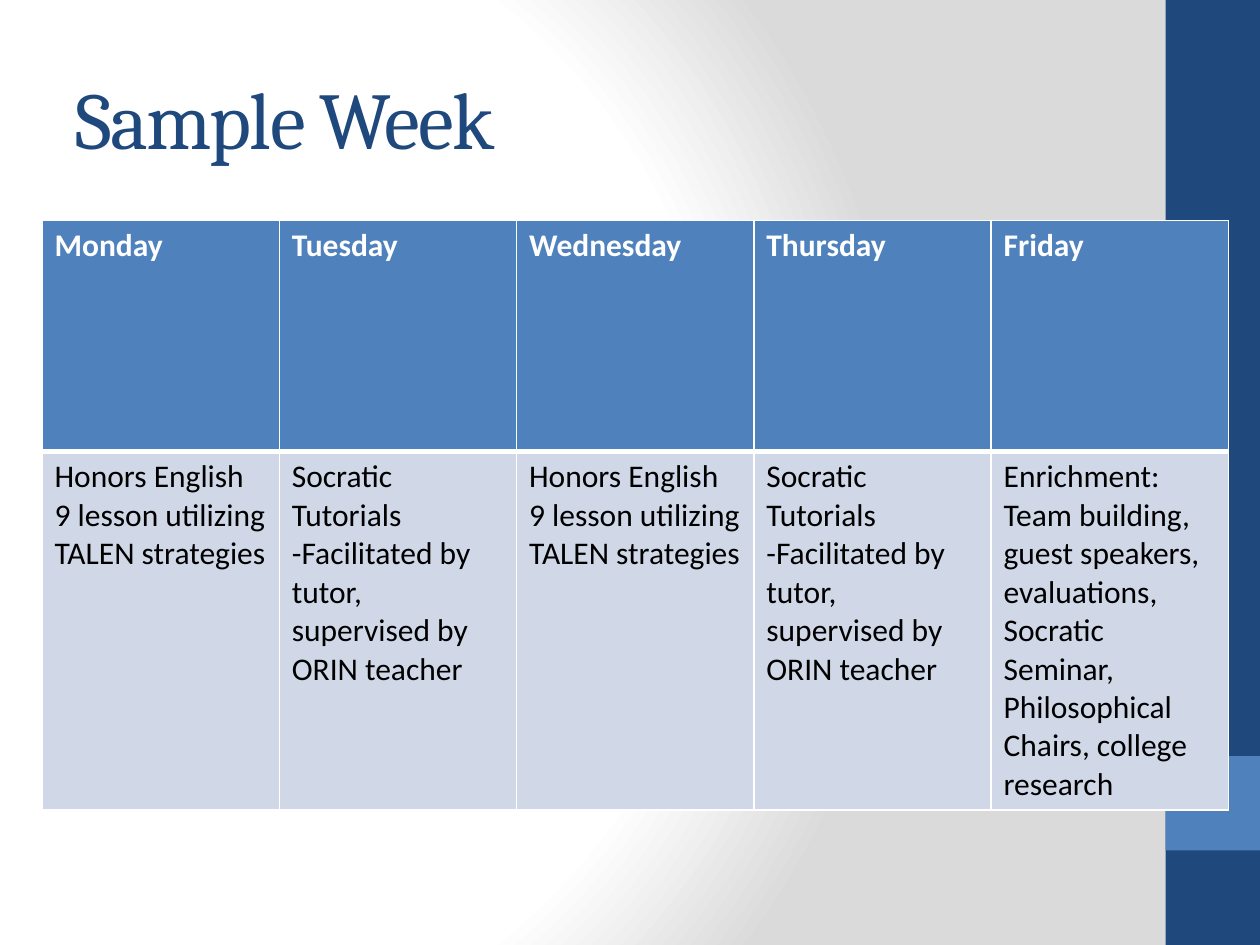
from pptx import Presentation
from pptx.dml.color import RGBColor
from pptx.enum.shapes import MSO_SHAPE
from pptx.enum.text import MSO_ANCHOR
from pptx.oxml import parse_xml
from pptx.oxml.ns import nsdecls
from pptx.util import Pt

SCALE = 9525  # EMU in one px, 96 px to the inch
NAVY, BLUE, PALE = "1F497D", "4F81BD", "D0D8E8"
WHITE, BLACK, GREY = "FFFFFF", "000000", "DADADA"


def px(*sizes):
    return [size * SCALE for size in sizes]


def color(code):
    return RGBColor.from_string(code)


class Deck:
    head = "Cambria"
    body = "Calibri"

    def __init__(self, wide, high):
        self.file = Presentation()
        self.file.slide_width, self.file.slide_height = px(wide, high)
        self.slide = self.file.slides.add_slide(self.file.slide_layouts[6])

    def ground(self, stops, focus):
        marks = "".join(
            f'<a:gs pos="{spot * 1000}"><a:srgbClr val="{code}"/></a:gs>'
            for spot, code in stops)
        edges = " ".join(
            f'{side}="{part * 1000}"' for side, part in zip("ltrb", focus))
        self.slide.element.cSld.insert(0, parse_xml(
            f'<p:bg {nsdecls("p", "a")}><p:bgPr><a:gradFill rotWithShape="1">'
            f'<a:gsLst>{marks}</a:gsLst><a:path path="circle">'
            f'<a:fillToRect {edges}/></a:path></a:gradFill>'
            '<a:effectLst/></p:bgPr></p:bg>'))

    def block(self, box, fill):
        shape = self.slide.shapes.add_shape(MSO_SHAPE.RECTANGLE, *px(*box))
        shape.shadow.inherit = False
        shape.fill.solid()
        shape.fill.fore_color.rgb = color(fill)
        shape.line.fill.background()

    def style(self, para, face, size, ink, bold=False):
        font = para.font
        font.name, font.size, font.bold = face, Pt(size), bold
        font.color.rgb = color(ink)

    def title(self, box, text):
        frame = self.slide.shapes.add_textbox(*px(*box)).text_frame
        frame.word_wrap = True
        frame.vertical_anchor = MSO_ANCHOR.MIDDLE
        para = frame.paragraphs[0]
        run = para.add_run()
        run.text = text
        self.style(para, self.head, 46, NAVY)
        run.font._element.set("spc", "-100")

    def edge(self, cell, widths):
        props = cell._tc.get_or_add_tcPr()
        for spot, (side, width) in enumerate(zip("LRTB", widths)):
            props.insert(spot, parse_xml(
                f'<a:ln{side} {nsdecls("a")} w="{Pt(width)}"><a:solidFill>'
                f'<a:srgbClr val="{WHITE}"/></a:solidFill></a:ln{side}>'))

    def table(self, box, rows, looks):
        grid = self.slide.shapes.add_table(
            len(rows), len(rows[0]), *px(*box)).table
        grid.horz_banding = False
        for row, texts, (high, fill, ink, bold, widths) in zip(
                grid.rows, rows, looks):
            row.height = high * SCALE
            for cell, text in zip(row.cells, texts):
                cell.text = text
                cell.fill.solid()
                cell.fill.fore_color.rgb = color(fill)
                self.edge(cell, widths)
                for para in cell.text_frame.paragraphs:
                    self.style(para, self.body, 18, ink, bold)


def main():
    deck = Deck(960, 720)

    # Background and side bar
    deck.ground([(0, WHITE), (75, WHITE), (100, GREY)], (20, 50, 100, 50))
    deck.block((888, 0, 72, 720), NAVY)
    deck.block((888, 576, 72, 72), BLUE)

    # Title
    deck.title((48, 29, 800, 120), "Sample Week")

    # Week table
    lesson = "Honors English 9 lesson utilizing TALEN strategies"
    tutor = ("Socratic Tutorials\n"
             "-Facilitated by tutor, supervised by ORIN teacher")
    extra = ("Enrichment: Team building, guest speakers, evaluations, "
             "Socratic Seminar, Philosophical Chairs, college research")
    week = [
        ["Monday", "Tuesday", "Wednesday", "Thursday", "Friday"],
        [lesson, tutor, lesson, tutor, extra],
    ]
    looks = [
        (176, BLUE, WHITE, True, (1, 1, 1, 3)),
        (273, PALE, BLACK, False, (1, 1, 3, 1)),
    ]
    deck.table((32, 168, 904, 449), week, looks)

    deck.file.save("out.pptx")


if __name__ == "__main__":
    main()
